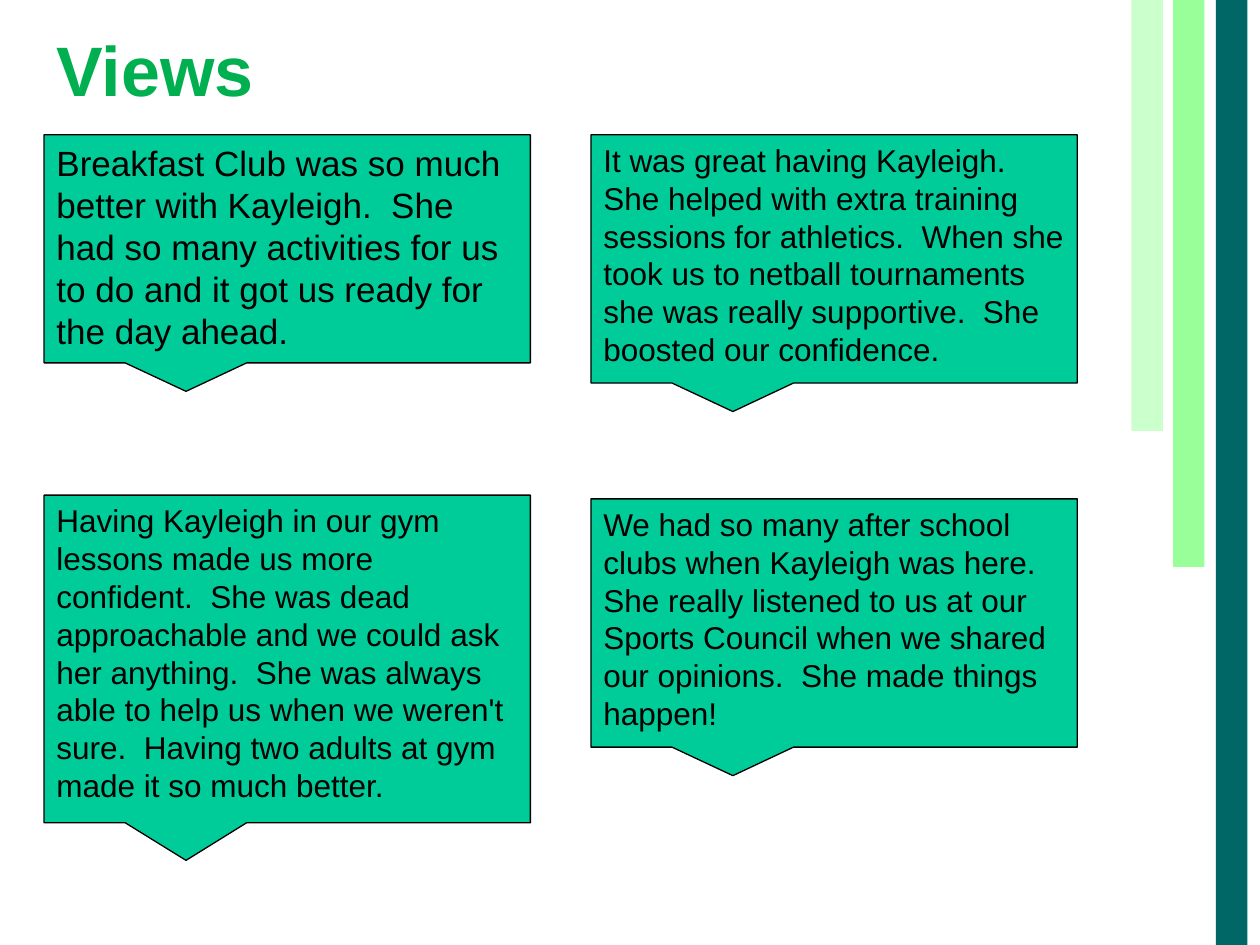
from lxml import etree
from pptx import Presentation
from pptx.dml.color import RGBColor
from pptx.enum.shapes import MSO_SHAPE
from pptx.enum.text import MSO_ANCHOR, PP_ALIGN
from pptx.oxml.ns import qn
from pptx.util import Inches, Pt

RECT = MSO_SHAPE.RECTANGLE
CALLOUT = MSO_SHAPE.RECTANGULAR_CALLOUT
TOP = MSO_ANCHOR.TOP
MIDDLE = MSO_ANCHOR.MIDDLE
LEFT = PP_ALIGN.LEFT


def color(code):
    return RGBColor.from_string(code)


class Deck:
    face = "Arial"
    ink = "000000"
    green = "00B050"
    mint = "00CC99"

    def __init__(self, wide, high):
        self.show = Presentation()
        self.show.slide_width = Inches(wide)
        self.show.slide_height = Inches(high)
        self.slide = self.show.slides.add_slide(self.show.slide_layouts[6])

    def label(self, shape, text, size, tone, anchor, bold=False):
        frame = shape.text_frame
        frame.word_wrap = True
        frame.vertical_anchor = anchor
        para = frame.paragraphs[0]
        para.text = text
        para.alignment = LEFT
        font = para.font
        font.name = self.face
        font.size = Pt(size)
        font.bold = bold
        font.color.rgb = color(tone)

    def shape(self, kind, box, fill):
        item = self.slide.shapes.add_shape(kind, *map(Inches, box))
        item.shadow.inherit = False
        item.fill.solid()
        item.fill.fore_color.rgb = color(fill)
        return item

    def bar(self, left, high, fill, alpha=100):
        item = self.shape(RECT, (left, 0, 0.25, high), fill)
        item.line.fill.background()
        if alpha < 100:
            tone = item._element.spPr.find(qn("a:solidFill"))[0]
            etree.SubElement(tone, qn("a:alpha")).set("val", str(alpha * 1000))

    def title(self, box, text):
        item = self.slide.shapes.add_textbox(*map(Inches, box))
        self.label(item, text, 40, self.green, MIDDLE, True)

    def quote(self, left, top, high, text, size=18, tip=0.615):
        item = self.shape(CALLOUT, (left, top, 3.86, high), self.mint)
        item.adjustments[0] = -0.208
        item.adjustments[1] = tip
        item.line.color.rgb = color(self.ink)
        item.line.width = Pt(0.75)
        self.label(item, text, size, self.ink, TOP)


def main():
    deck = Deck(10, 7.5)
    deck.bar(8.98, 3.42, "99FF99", 50)
    deck.bar(9.31, 4.5, "99FF99")
    deck.bar(9.65, 7.5, "006666")
    deck.title((0.35, -0.08, 2.13, 1.25), "Views")

    near, far = 0.35, 4.69
    deck.quote(near, 1.07, 1.81,
               "Breakfast Club was so much better with Kayleigh.  She had so "
               "many activities for us to do and it got us ready for the day "
               "ahead.", size=20, tip=0.625)
    deck.quote(near, 3.93, 2.6,
               "Having Kayleigh in our gym lessons made us more confident.  "
               "She was dead approachable and we could ask her anything.  She "
               "was always able to help us when we weren't sure.  Having two "
               "adults at gym made it so much better.")
    deck.quote(far, 1.07, 1.97,
               "It was great having Kayleigh.  She helped with extra training "
               "sessions for athletics.  When she took us to netball "
               "tournaments she was really supportive.  She boosted our "
               "confidence.")
    deck.quote(far, 3.96, 1.97,
               "We had so many after school clubs when Kayleigh was here.  She "
               "really listened to us at our Sports Council when we shared our "
               "opinions.  She made things happen!")
    deck.show.save("out.pptx")


if __name__ == "__main__":
    main()
